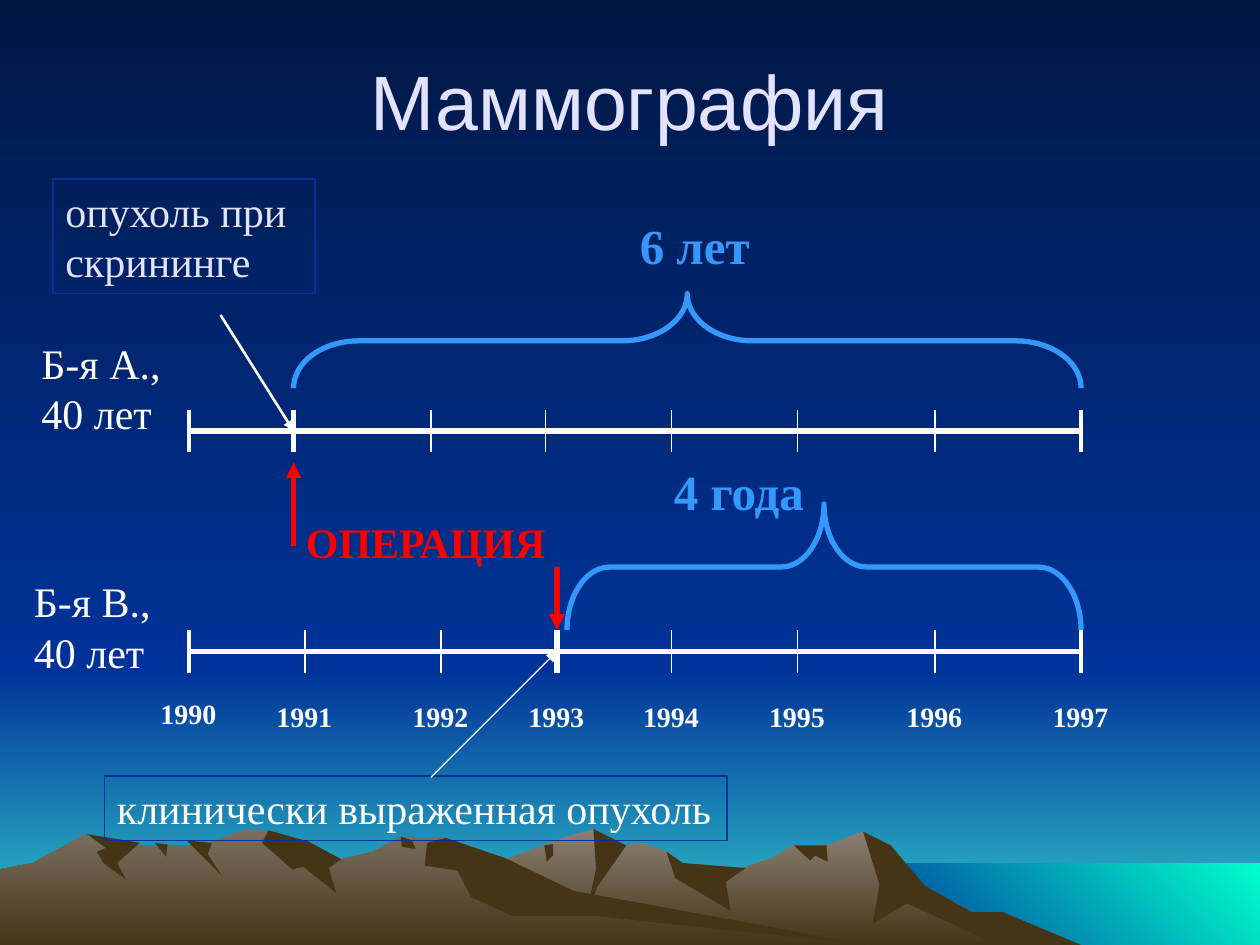
from pptx import Presentation
from pptx import util as u
from pptx.dml.color import RGBColor
from pptx.enum import shapes, text
from pptx.oxml import parse_xml
from pptx.oxml.ns import nsdecls

WHITE = RGBColor(0xFF, 0xFF, 0xFF)
LAVENDER = RGBColor(0xE3, 0xE3, 0xFF)
RED = RGBColor(0xFF, 0x00, 0x00)
SKY = RGBColor(0x33, 0x99, 0xFF)
BLUE = RGBColor(0x00, 0x33, 0x99)
NAVY = RGBColor(0x00, 0x17, 0x44)
TEAL = RGBColor(0x33, 0xCC, 0xCC)
AQUA = RGBColor(0x00, 0xFF, 0xCC)
BROWN = RGBColor(0x46, 0x34, 0x16)
STONE = RGBColor(0x8A, 0x80, 0x74)
ROCK = RGBColor(0x7C, 0x70, 0x62)

WIDTH, HEIGHT = 10, 7.5
HORIZON, SHORE = 5.33, 6.85
DOWN, UP_RIGHT = 270, 45
FIRST_YEAR = 1990
AXIS_A, AXIS_B = 3.42, 5.17
START, END = 1.5, 8.58
SHARED_TICKS = (5.33, 6.33, 7.42, END)
TICKS_A = (START, 2.33, 3.42, 4.33, *SHARED_TICKS)
TICKS_B = (START, 2.42, 3.5, 4.42, *SHARED_TICKS)
SCREENING, CLINICAL = TICKS_A[1], TICKS_B[3]
TICK_REACH = 0.17

RIGHT_RIDGE = ((2.58, 7.5), (3.27, 7.09), (3.94, 6.85), (4.5, 6.64), (4.71, 6.58), (4.86, 6.73),
               (5.09, 6.69), (5.29, 6.76), (5.36, 6.9), (5.66, 6.97), (6.13, 6.81), (6.29, 6.71),
               (6.56, 6.71), (6.85, 6.6), (7.23, 6.98), (8.2, 7.5))
LEFT_RIDGE = ((0, 6.9), (0.26, 6.85), (0.68, 6.62), (0.94, 6.71), (1.6, 6.71), (1.96, 6.58),
              (2.19, 6.6), (2.36, 6.81), (2.71, 6.82), (2.96, 6.76), (3.18, 6.64), (3.54, 6.65),
              (4.32, 7.12), (6.9, 7.5))
RIGHT_SHADOWS = {
    "highest peak": ((6.85, 6.6), (7.07, 6.71), (7.34, 7.03), (7.71, 7.24), (7.96, 7.24),
                     (8.58, 7.5), (7.92, 7.5), (7.2, 7.17), (6.93, 7.33), (6.98, 7.02)),
    "middle peak": ((4.71, 6.58), (4.97, 6.71), (4.74, 7.04), (4.65, 7.27), (4.73, 6.9)),
    "saddle": ((5.29, 6.76), (5.42, 6.85), (5.92, 6.89), (5.76, 7), (5.8, 7.23), (5.36, 6.97)),
    "shoulder": ((6.3, 6.71), (6.56, 6.71), (6.57, 6.84), (6.47, 6.79), (6.43, 6.83)),
    "notch": ((4.32, 6.71), (4.39, 6.7), (4.39, 6.79), (4.34, 6.84))}
LEFT_SHADOWS = {
    "main peak": ((2.13, 6.59), (2.45, 6.68), (2.71, 6.82), (2.61, 6.89), (2.67, 7.09),
                  (2.41, 6.88), (2.32, 6.9), (2.08, 6.69)),
    "long slope": ((3.39, 6.69), (3.54, 6.65), (4.01, 6.81), (4.55, 7.07), (6.9, 7.5),
                   (4.72, 7.27), (4.07, 7.27), (3.74, 7.12), (3.63, 6.91), (3.37, 6.87)),
    "first peak": ((0.69, 6.62), (1.11, 6.69), (0.93, 6.85), (1, 6.98), (0.82, 6.85),
                   (0.77, 6.76), (0.84, 6.73)),
    "gully": ((1.48, 6.67), (1.68, 6.69), (1.65, 6.78), (1.76, 6.95)),
    "dimple": ((1.23, 6.69), (1.33, 6.7), (1.32, 6.8)),
    "crest": ((3.18, 6.64), (3.27, 6.67), (3.3, 6.74), (3.19, 6.72))}


def paint(shape, colors, angle=DOWN):
    """Fill a borderless shape with one colour or a two-colour gradient."""
    shape.shadow.inherit = False
    shape.line.fill.background()
    if len(colors) == 1:
        shape.fill.solid()
        shape.fill.fore_color.rgb = colors[0]
        return
    shape.fill.gradient()
    shape.fill.gradient_angle = angle
    for stop, color, position in zip(shape.fill.gradient_stops, colors, (0, 1)):
        stop.color.rgb = color
        stop.position = position


def add_band(slide, left, top, bottom, colors, angle=DOWN):
    """Add a gradient band that reaches the right edge of the slide."""
    place = (left, top, WIDTH - left, bottom - top)
    band = slide.shapes.add_shape(shapes.MSO_SHAPE.RECTANGLE, *map(u.Inches, place))
    paint(band, colors, angle)


def add_outline(slide, points, *colors):
    """Add a closed outline through points given in inches."""
    start, *others = [(u.Inches(x), u.Inches(y)) for x, y in points]
    builder = slide.shapes.build_freeform(*start)
    builder.add_line_segments(others, close=True)
    paint(builder.convert_to_shape(), colors)


def add_mountains(slide, ridge, color, shadows):
    """Stand a ridge on the slide's bottom edge and lay its shadows over it."""
    foot = (ridge[0][0], HEIGHT)
    add_outline(slide, (*ridge, foot), color, BROWN)
    for shadow in shadows.values():
        add_outline(slide, shadow, BROWN)


def add_landscape(slide):
    """Add the sky, the sea and two mountain ranges."""
    overlap = 0.02
    add_band(slide, 0, HORIZON - overlap, HEIGHT, (BLUE, TEAL))
    add_band(slide, 0, 0, HORIZON, (NAVY, BLUE))
    add_band(slide, 6.83, SHORE, HEIGHT, (BLUE, AQUA), UP_RIGHT)
    add_mountains(slide, RIGHT_RIDGE, STONE, RIGHT_SHADOWS)
    add_mountains(slide, LEFT_RIDGE, ROCK, LEFT_SHADOWS)


def style(paragraph, alignment, name, size, color, bold=False):
    """Align a paragraph and set the font of its run."""
    paragraph.alignment = alignment
    font = paragraph.runs[0].font
    font.name, font.size, font.bold = name, u.Pt(size), bold
    font.color.rgb = color


def add_title(slide, title_text):
    """Place the title in front of the landscape."""
    title = slide.shapes.title
    title.element.getparent().append(title.element)
    title.left, title.top, title.width, title.height = map(u.Inches, (0.75, 0.17, 8.5, 1.25))
    title.text_frame.text = title_text
    title.text_frame.vertical_anchor = text.MSO_ANCHOR.MIDDLE
    style(title.text_frame.paragraphs[0], text.PP_ALIGN.CENTER, "Arial", 44, LAVENDER)


def write(shape, label, size, color, bold=False, wrap=False):
    """Write left-aligned serif text from the top of a shape."""
    frame = shape.text_frame
    frame.text = label
    frame.word_wrap = wrap
    frame.auto_size = text.MSO_AUTO_SIZE.SHAPE_TO_FIT_TEXT
    frame.vertical_anchor = text.MSO_ANCHOR.TOP
    for paragraph in frame.paragraphs:
        style(paragraph, text.PP_ALIGN.LEFT, "Times New Roman", size, color, bold)


def add_label(slide, label, place, size, color, bold=False):
    """Add a text box that does not wrap."""
    write(slide.shapes.add_textbox(*map(u.Inches, place)), label, size, color, bold)


def add_line(slide, start, end, width, color=WHITE, arrow=False):
    """Add a straight line, with an arrowhead at its end if asked."""
    line = slide.shapes.add_connector(shapes.MSO_CONNECTOR.STRAIGHT,
                                      *map(u.Inches, (*start, *end)))
    line.line.color.rgb = color
    line.line.width = u.Pt(width)
    if arrow:
        line.line._get_or_add_ln().append(parse_xml(f'<a:tailEnd {nsdecls("a")} type="triangle"/>'))
    line.element.spPr.append(parse_xml(f'<a:effectLst {nsdecls("a")}/>'))


def add_timeline(slide, y, ticks, event):
    """Add an axis with yearly ticks, thicker at its ends and at the event."""
    add_line(slide, (START, y), (END, y), 3)
    widths = {START: 2.25, END: 2.25, event: 3}
    for x in ticks:
        add_line(slide, (x, y - TICK_REACH), (x, y + TICK_REACH), widths.get(x, 0.75))


def add_years(slide):
    """Centre each year under its tick on the lower axis."""
    width = 0.65
    for year, x in enumerate(TICKS_B, FIRST_YEAR):
        top = 5.48 if year == FIRST_YEAR else 5.5
        add_label(slide, str(year), (x - width / 2, top, width, 0.37), 16, WHITE, True)


def add_outlined(slide, kind, place, color, width):
    """Add an unfilled preset shape."""
    shape = slide.shapes.add_shape(kind, *map(u.Inches, place))
    shape.shadow.inherit = False
    shape.fill.background()
    shape.line.color.rgb = color
    shape.line.width = u.Pt(width)
    return shape


def add_brace(slide, left, right, top, height, curl):
    """Add an upward brace over a span by turning a right brace about its centre."""
    span = right - left
    place = ((left + right - height) / 2, top + (height - span) / 2, height, span)
    brace = add_outlined(slide, shapes.MSO_SHAPE.RIGHT_BRACE, place, SKY, 3)
    brace.rotation = 270
    brace.adjustments[0], brace.adjustments[1] = curl, 0.5


def add_callout(slide, label, place, color, pointer, width, wrap=False):
    """Add a framed remark and the arrow that leads from it to an event."""
    box = add_outlined(slide, shapes.MSO_SHAPE.RECTANGLE, place, BLUE, 0.75)
    write(box, label, 24, color, wrap=wrap)
    add_line(slide, *pointer, width, arrow=True)


def main():
    """Build the slide and save it."""
    presentation = Presentation()
    presentation.slide_width, presentation.slide_height = u.Inches(WIDTH), u.Inches(HEIGHT)
    slide = presentation.slides.add_slide(presentation.slide_layouts[5])
    slide.background.fill.solid()
    slide.background.fill.fore_color.rgb = SKY
    add_landscape(slide)
    add_title(slide, "Маммография")
    add_timeline(slide, AXIS_A, TICKS_A, SCREENING)
    add_timeline(slide, AXIS_B, TICKS_B, CLINICAL)
    add_years(slide)
    add_callout(slide, "опухоль при скрининге", (0.42, 1.42, 2.08, 0.91), LAVENDER,
                ((1.75, 2.5), (SCREENING, AXIS_A)), 1.5, wrap=True)
    add_callout(slide, "клинически выраженная опухоль", (0.83, 6.16, 4.94, 0.51), WHITE,
                ((3.42, 6.17), (CLINICAL, AXIS_B)), 0.75)
    add_label(slide, "ОПЕРАЦИЯ", (2.33, 4.05, 2.14, 0.5), 24, RED, True)
    for x, tail, tip in ((SCREENING, 4.33, 3.67), (CLINICAL, 4.5, 5)):
        add_line(slide, (x, tail), (x, tip), 3, RED, arrow=True)
    add_brace(slide, SCREENING, END, 2.33, 0.75, 0.69)
    add_brace(slide, 4.5, END, 4, 1, 0.34)
    for span, place in (("6 лет", (4.98, 1.66, 1.07, 0.57)), ("4 года", (5.25, 3.61, 1.26, 0.57))):
        add_label(slide, span, place, 28, SKY, True)
    for patient, left, top in (("А", 0.23, 2.63), ("В", 0.17, 4.52)):
        add_label(slide, f"Б-я {patient}.,\n40 лет", (left, top, 1.15, 0.9), 24, WHITE)
    presentation.save("out.pptx")


if __name__ == "__main__":
    main()
